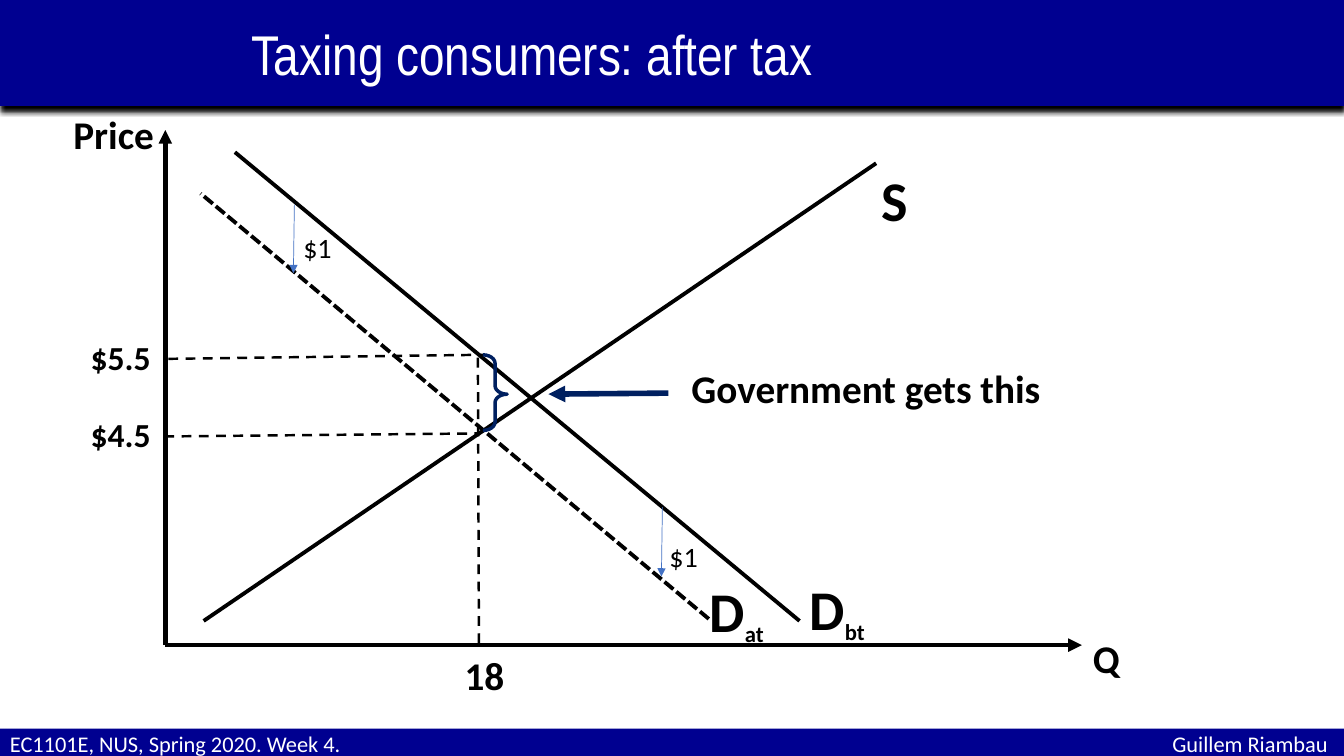
from pptx import Presentation
from pptx.dml.color import RGBColor
from pptx.enum.dml import MSO_LINE_DASH_STYLE as Dash
from pptx.enum.shapes import MSO_CONNECTOR as Conn, MSO_SHAPE as Shape
from pptx.enum.text import MSO_ANCHOR as Anchor, PP_ALIGN as Align
from pptx.oxml.ns import qn
from pptx.util import Emu, Pt
from lxml.etree import SubElement

BLACK = RGBColor(0x00, 0x00, 0x00)
WHITE = RGBColor(0xFF, 0xFF, 0xFF)
BAR_BLUE = RGBColor(0x00, 0x00, 0x90)
NAVY = RGBColor(0x00, 0x20, 0x60)
SHIFT_BLUE = RGBColor(0x44, 0x72, 0xC4)

SCALE = 9144  # EMU per px, 100 px to the inch
LABEL_W = 152
SLIDE_W, SLIDE_H = 1333, 750


def px(n):
    return Emu(n * SCALE)


def add_run(p, text, size=28, font="Calibri", color=BLACK, bold=False, sub=False):
    r = p.add_run()
    r.text = text
    r.font.size = Pt(size)
    r.font.name = font
    r.font.color.rgb = color
    r.font.bold = bold
    if sub:
        r._r.get_or_add_rPr().set("baseline", "-25000")


def add_label(s, x, y, h, text, width=LABEL_W, sub="", size=28, bold=True):
    tf = s.shapes.add_textbox(px(x), px(y), px(width), px(h)).text_frame
    tf.word_wrap = True
    p = tf.paragraphs[0]
    add_run(p, text, size=size, bold=bold)
    if sub:
        add_run(p, sub, bold=bold, sub=True)


def add_line(s, start, end, width, color=BLACK, dash=None, arrow=False):
    line = s.shapes.add_connector(Conn.STRAIGHT, *map(px, start + end))
    line.line.color.rgb = color
    line.line.width = Pt(width)
    if dash:
        line.line.dash_style = dash
    if arrow:
        SubElement(line.line._get_or_add_ln(), qn("a:tailEnd"), type="triangle")
    SubElement(line._element.spPr, qn("a:effectLst"))


def add_bar(s, y, h, text, size, font="Calibri", indent=10, right_tab=None):
    """Add a full-width blue bar with a black shadow under it."""
    sp = s.shapes.add_shape(Shape.RECTANGLE, 0, px(y), px(SLIDE_W), px(h))
    sp.fill.solid()
    sp.fill.fore_color.rgb = BAR_BLUE
    sp.line.fill.background()
    sp.shadow.inherit = False
    effects = sp._element.spPr.find(qn("a:effectLst"))
    shadow = SubElement(effects, qn("a:outerShdw"), blurRad=str(Pt(4)),
                        dist=str(Pt(4)), dir="5400000", rotWithShape="0")
    SubElement(shadow, qn("a:srgbClr"), val=str(BLACK))
    tf = sp.text_frame
    tf.word_wrap = True
    tf.vertical_anchor = Anchor.MIDDLE
    tf.margin_left = px(indent)
    p = tf.paragraphs[0]
    p.alignment = Align.LEFT
    if right_tab:
        tabs = SubElement(p._p.get_or_add_pPr(), qn("a:tabLst"))
        SubElement(tabs, qn("a:tab"), pos=str(px(right_tab)), algn="r")
    add_run(p, text, size=size, font=font, color=WHITE)


def add_tax_brace(s):
    sp = s.shapes.add_shape(Shape.LEFT_BRACE, px(479), px(352), px(24), px(75))
    sp.rotation = 180
    sp.adjustments[0] = 0.35
    sp.adjustments[1] = 0.48
    sp.fill.background()
    sp.line.color.rgb = NAVY
    sp.line.width = Pt(2.5)
    sp.shadow.inherit = False


def main():
    prs = Presentation()
    prs.slide_width, prs.slide_height = px(SLIDE_W), px(SLIDE_H)
    s = prs.slides.add_slide(prs.slide_layouts[6])

    add_bar(s, 723, 30, "EC1101E, NUS, Spring 2020. Week 4.\tGuillem Riambau",
            size=16, right_tab=1307)
    add_bar(s, 0, 105, "Taxing consumers: after tax", size=40,
            font="Arial Narrow", indent=249)

    origin = (164, 640)
    for axis_end in ((164, 129), (1073, 640)):
        add_line(s, origin, axis_end, 3.25, arrow=True)
    add_label(s, 63, 105, 57, "Price")
    add_label(s, 1074, 624, 57, "Q")

    # Demand before tax, supply, demand after tax
    add_line(s, (793, 616), (233, 151), 2.75)
    add_line(s, (202, 616), (869, 162), 2.75)
    add_line(s, (703, 614), (199, 192), 2.75, dash=Dash.SQUARE_DOT)
    add_label(s, 793, 565, 77, "D", sub="bt", size=40)
    add_label(s, 864, 159, 77, "S", size=40)
    add_label(s, 694, 567, 77, "D", sub="at", size=40)

    # Guides to the prices and the quantity
    for start, end in (((163, 433), (474, 430)),
                       ((167, 356), (479, 352)),
                       ((475, 638), (474, 352))):
        add_line(s, start, end, 1.75, dash=Dash.DASH)
    add_label(s, 80, 406, 50, "$4.5", size=24)
    add_label(s, 80, 329, 50, "$5.5", size=24)
    add_label(s, 451, 641, 57, "18")

    # Downward shift of demand by the tax
    for start, end, label in (((292, 203), (291, 271), (291, 224)),
                              ((657, 503), (656, 572), (654, 530))):
        add_line(s, start, end, 0.5, color=SHIFT_BLUE, arrow=True)
        add_label(s, *label, 44, "$1", size=20, bold=False)

    add_line(s, (663, 390), (544, 391), 4, color=NAVY, arrow=True)
    add_label(s, 676, 357, 57, "Government gets this", width=512)
    add_tax_brace(s)

    prs.save("out.pptx")


if __name__ == "__main__":
    main()
